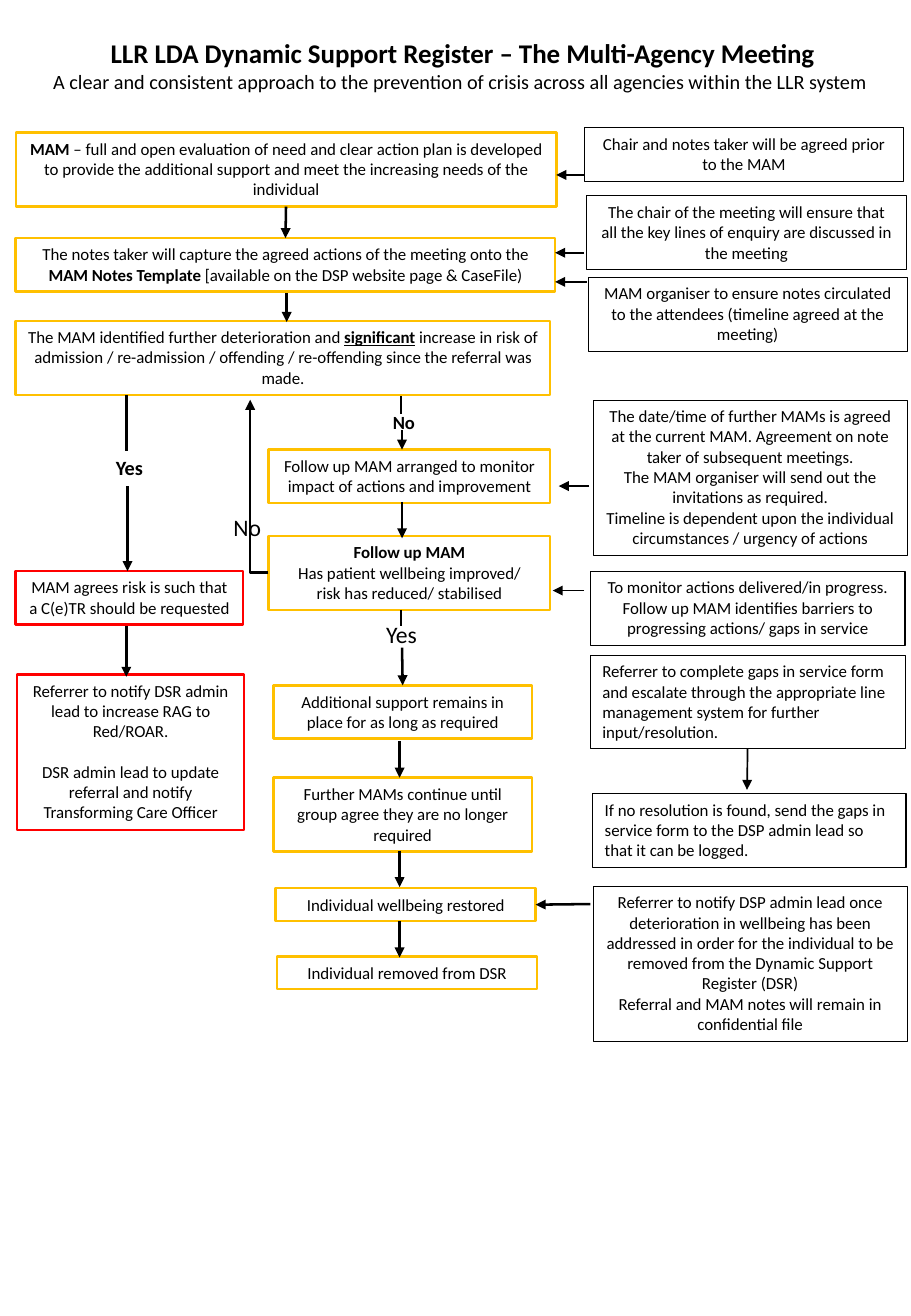
from dataclasses import dataclass
from typing import NamedTuple

from lxml import etree
from pptx import Presentation
from pptx.dml.color import RGBColor
from pptx.enum.shapes import MSO_CONNECTOR, MSO_SHAPE
from pptx.enum.text import MSO_ANCHOR, MSO_AUTO_SIZE, PP_ALIGN
from pptx.oxml.ns import qn
from pptx.util import Emu, Pt

PX = 9144  # 100 px to the inch
RECT = MSO_SHAPE.RECTANGLE
STRAIGHT, ELBOW = MSO_CONNECTOR.STRAIGHT, MSO_CONNECTOR.ELBOW
LEFT, CENTER = PP_ALIGN.LEFT, PP_ALIGN.CENTER
TOP = MSO_ANCHOR.TOP
GROW = MSO_AUTO_SIZE.SHAPE_TO_FIT_TEXT
SIDE_TOP, SIDE_BOTTOM, SIDE_RIGHT = 0, 2, 3

FONT = "Calibri"
BLACK, WHITE, AMBER, RED = "000000", "FFFFFF", "FFC000", "FF0000"


class Run(NamedTuple):
    text: str
    bold: bool = False
    underline: bool = False


class Para(NamedTuple):
    runs: tuple[Run, ...]
    size: int = 10
    align: PP_ALIGN = CENTER
    before: int = 0


@dataclass
class Box:
    key: str
    at: tuple[int, int, int, int]
    paras: list[Para]
    color: str = AMBER
    width: float = 1.5
    fill: str | None = None


@dataclass
class Label:
    at: tuple[int, int, int, int]
    para: Para


@dataclass
class Arrow:
    start: tuple[int, int]
    end: tuple[int, int]
    width: float = 1.5
    head: bool = True
    begin_at: tuple[str, int] | None = None
    end_at: tuple[str, int] | None = None
    kind: MSO_CONNECTOR = STRAIGHT


def para(text: str, size: int = 10, align: PP_ALIGN = CENTER, before: int = 0,
         bold: bool = False) -> Para:
    return Para((Run(text, bold),), size, align, before)


def note(key: str, at: tuple[int, int, int, int], *paras: Para,
         width: float = 0.25, fill: str | None = None) -> Box:
    """Black-outlined guidance box in the right column."""
    return Box(key, at, list(paras), BLACK, width, fill)


TITLE = [
    para("LLR LDA Dynamic Support Register – The Multi-Agency Meeting", 16, bold=True),
    para("A clear and consistent approach to the prevention of crisis across all "
         "agencies within the LLR system ", 12),
]

BOXES = [
    Box("mam", (13, 109, 445, 61), [Para((
        Run("MAM", True),
        Run(" – full and open evaluation of need and clear action plan is developed to "
            "provide the additional support and meet the increasing needs of the individual")))]),
    Box("notes", (13, 196, 444, 44), [Para((
        Run("The notes taker will capture the agreed actions of the meeting onto the "),
        Run("MAM Notes Template ", True),
        Run("[available on the DSP website page & CaseFile)")))]),
    Box("deterioration", (13, 264, 440, 61), [Para((
        Run("The MAM identified further deterioration and "),
        Run("significant", True, True),
        Run(" increase in risk of admission / re-admission / offending / "
            "re-offending since the referral was made.")))]),
    Box("arranged", (221, 370, 232, 44),
        [para("Follow up MAM arranged to monitor impact of actions and improvement")]),
    Box("follow_up", (221, 441, 232, 61), [
        para("Follow up MAM", bold=True),
        para("Has patient wellbeing improved/"),
        para("risk has reduced/ stabilised")]),
    Box("support", (225, 564, 213, 44),
        [para("Additional support remains in place for as long as required")]),
    Box("further", (225, 640, 213, 61),
        [para("Further MAMs continue until group agree they are no longer required")]),
    Box("restored", (227, 731, 214, 27), [para("Individual wellbeing restored")]),
    Box("removed", (228, 787, 214, 27), [para("Individual removed from DSR")]),
    Box("risk", (13, 470, 187, 44),
        [para("MAM agrees risk is such that a C(e)TR should be requested")], RED),
    Box("notify", (14, 555, 187, 128), [
        para("Referrer to notify DSR admin lead to increase RAG to Red/ROAR."),
        para("DSR admin lead to update referral and notify Transforming Care Officer",
             before=12)], RED),
    note("chair", (481, 105, 263, 44),
         para("Chair and notes taker will be agreed prior to the MAM")),
    note("enquiry", (483, 161, 263, 61),
         para("The chair of the meeting will ensure that all the key lines of enquiry "
              "are discussed in the meeting")),
    note("organiser", (484, 228, 263, 61),
         para("MAM organiser to ensure notes circulated to the attendees "
              "(timeline agreed at the meeting)")),
    note("timing", (488, 329, 259, 128),
         para("The date/time of further MAMs is agreed at the current MAM. "
              "Agreement on note taker of subsequent meetings."),
         para("The MAM organiser will send out the invitations as required."),
         para("Timeline is dependent upon the individual circumstances / urgency of actions")),
    note("monitor", (486, 470, 259, 61),
         para("To monitor actions delivered/in progress. Follow up MAM identifies "
              "barriers to progressing actions/ gaps in service"), width=0.75, fill=WHITE),
    note("escalate", (486, 539, 259, 77),
         para("Referrer to complete gaps in service form and escalate through the "
              "appropriate line management system for further input/resolution.", align=LEFT)),
    note("unresolved", (488, 653, 258, 61),
         para("If no resolution is found, send the gaps in service form to the DSP admin "
              "lead so that it can be logged.", align=LEFT), width=0.75, fill=WHITE),
    note("closing", (488, 729, 259, 128),
         para("Referrer to notify DSP admin lead once deterioration in wellbeing has been "
              "addressed in order for the individual to be removed from the Dynamic "
              "Support Register (DSR)"),
         para("Referral and MAM notes will remain in confidential file")),
]

LABELS = [
    Label((74, 370, 65, 30), para("Yes", 12, bold=True)),
    Label((300, 333, 65, 29), para("No", 11, bold=True)),
    Label((178, 417, 51, 34), para("No", 14)),
    Label((305, 505, 51, 34), para("Yes", 14)),
]

ARROWS = [
    Arrow((235, 170), (235, 196), begin_at=("mam", SIDE_BOTTOM), end_at=("notes", SIDE_TOP)),
    Arrow((236, 241), (236, 265)),
    Arrow((104, 325), (104, 371), head=False),
    Arrow((105, 400), (105, 470)),
    Arrow((104, 515), (104, 557)),
    Arrow((330, 326), (330, 341), head=False),
    Arrow((331, 354), (331, 370)),
    Arrow((331, 413), (331, 443)),
    Arrow((221, 471), (206, 329), kind=ELBOW),
    Arrow((330, 502), (330, 515), head=False),
    Arrow((331, 533), (331, 564), end_at=("support", SIDE_TOP)),
    Arrow((329, 610), (329, 640)),
    Arrow((329, 700), (329, 730)),
    Arrow((329, 758), (329, 788)),
    Arrow((486, 744), (441, 744), end_at=("restored", SIDE_RIGHT)),
    Arrow((481, 144), (458, 144), 1),
    Arrow((481, 208), (457, 208), 1),
    Arrow((483, 232), (457, 232), 1),
    Arrow((485, 400), (460, 400), 1),
    Arrow((481, 486), (455, 486), 1),
    Arrow((615, 616), (615, 650), 1, begin_at=("escalate", SIDE_BOTTOM)),
]


def rgb(color: str) -> RGBColor:
    return RGBColor.from_string(color)


def px(*values: int) -> list[Emu]:
    return [Emu(v * PX) for v in values]


def write(tf, paras: list[Para]) -> None:
    tf.word_wrap = True
    tf.auto_size = GROW
    tf.vertical_anchor = TOP
    for i, item in enumerate(paras):
        p = tf.paragraphs[0] if i == 0 else tf.add_paragraph()
        p.alignment = item.align
        if item.before:
            p.space_before = Pt(item.before)
        p.font.name, p.font.size = FONT, Pt(item.size)
        p.font.color.rgb = rgb(BLACK)
        p.font.bold = all(run.bold for run in item.runs)
        for run in item.runs:
            r = p.add_run()
            r.text = run.text
            if len(item.runs) > 1:
                r.font.bold, r.font.underline = run.bold, run.underline


def draw_box(slide, box: Box):
    sp = slide.shapes.add_shape(RECT, *px(*box.at))
    sp.shadow.inherit = False
    if box.fill:
        sp.fill.solid()
        sp.fill.fore_color.rgb = rgb(box.fill)
    else:
        sp.fill.background()
    sp.line.color.rgb = rgb(box.color)
    sp.line.width = Pt(box.width)
    write(sp.text_frame, box.paras)
    return sp


def draw_arrow(slide, arrow: Arrow, boxes: dict) -> None:
    cxn = slide.shapes.add_connector(arrow.kind, *px(*arrow.start, *arrow.end))
    if arrow.begin_at:
        key, side = arrow.begin_at
        cxn.begin_connect(boxes[key], side)
    if arrow.end_at:
        key, side = arrow.end_at
        cxn.end_connect(boxes[key], side)
    cxn.line.color.rgb = rgb(BLACK)
    cxn.line.width = Pt(arrow.width)
    sp_pr = cxn._element.spPr
    if arrow.kind == ELBOW:
        sp_pr.find(qn("a:prstGeom")).set("prst", "bentConnector2")
    if arrow.head:
        etree.SubElement(sp_pr.find(qn("a:ln")), qn("a:tailEnd"), type="triangle")
    etree.SubElement(sp_pr, qn("a:effectLst"))


def main() -> None:
    prs = Presentation()
    old_width = prs.slide_width
    prs.slide_width, prs.slide_height = px(750, 1083)
    for ph in prs.slide_master.placeholders:
        ph.left = ph.left * prs.slide_width // old_width
        ph.width = ph.width * prs.slide_width // old_width
    slide = prs.slides.add_slide(prs.slide_layouts[5])
    title = slide.shapes.title
    title.left, title.top, title.width, title.height = px(29, 25, 704, 57)
    write(title.text_frame, TITLE)
    boxes = {box.key: draw_box(slide, box) for box in BOXES}
    for label in LABELS:
        write(slide.shapes.add_textbox(*px(*label.at)).text_frame, [label.para])
    for arrow in ARROWS:
        draw_arrow(slide, arrow, boxes)
    prs.save("out.pptx")


if __name__ == "__main__":
    main()
